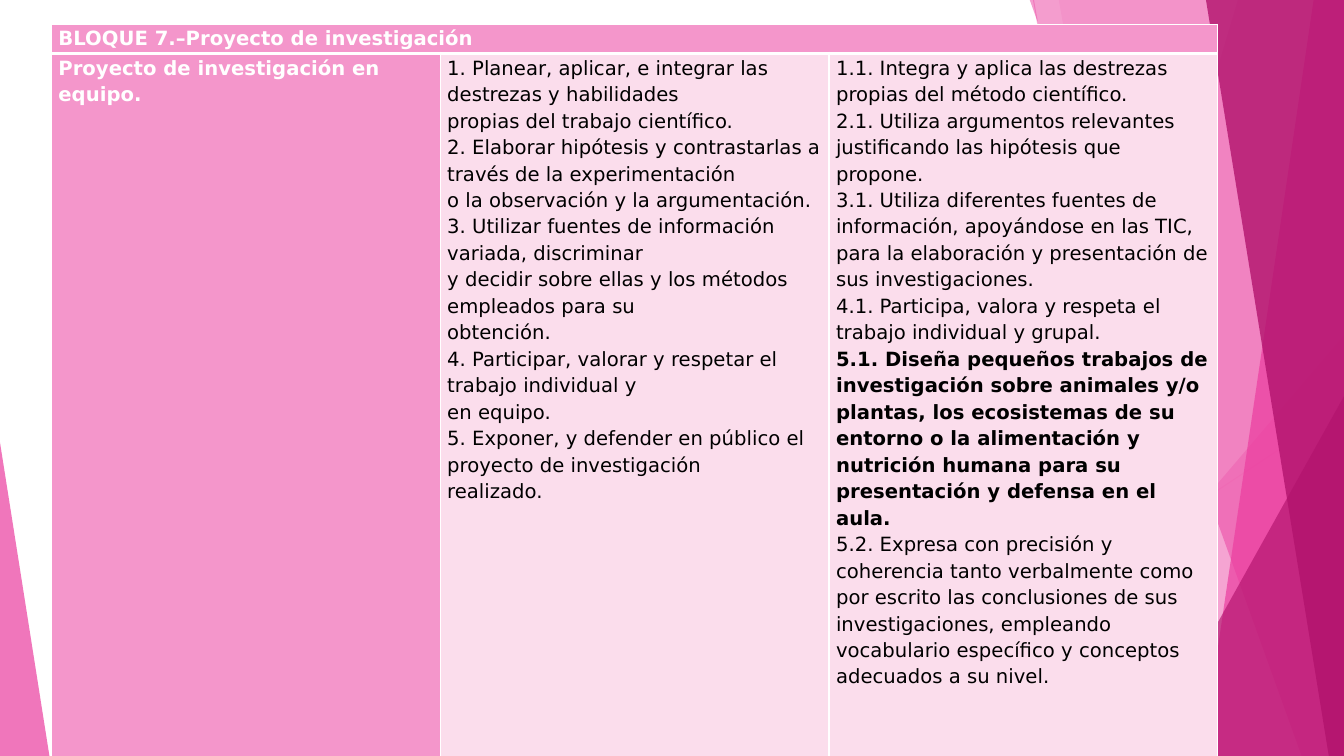
from pptx import Presentation
from pptx.dml.color import RGBColor
from pptx.enum.shapes import MSO_CONNECTOR, MSO_SHAPE
from pptx.oxml.ns import qn
from pptx.util import Pt
from lxml.etree import SubElement

PX = 9144  # 100 px to the inch
WIDE, HIGH = 1333, 750
FONT = "DejaVu Sans"
PINK, ROSE, WINE, PALE = "F496CB", "EB3D9F", "B2136D", "FBDDEC"
WHITE, BLACK = "FFFFFF", "000000"

TITLE = "BLOQUE 7.–Proyecto de investigación"
TOPIC = "Proyecto de investigación en equipo."
GOALS = [
    "1. Planear, aplicar, e integrar las destrezas y habilidades",
    "propias del trabajo científico.",
    "2. Elaborar hipótesis y contrastarlas a través de la experimentación",
    "o la observación y la argumentación.",
    "3. Utilizar fuentes de información variada, discriminar",
    "y decidir sobre ellas y los métodos empleados para su",
    "obtención.",
    "4. Participar, valorar y respetar el trabajo individual y",
    "en equipo.",
    "5. Exponer, y defender en público el proyecto de investigación",
    "realizado.",
]
MARKS = [
    "1.1. Integra y aplica las destrezas propias del método científico.",
    "2.1. Utiliza argumentos relevantes justificando las hipótesis que propone.",
    "3.1. Utiliza diferentes fuentes de información, apoyándose en las TIC, "
    "para la elaboración y presentación de sus investigaciones.",
    "4.1. Participa, valora y respeta el trabajo individual y grupal.",
    "5.1. Diseña pequeños trabajos de investigación sobre animales y/o plantas, "
    "los ecosistemas de su entorno o la alimentación y nutrición humana para su "
    "presentación y defensa en el aula.",
    "5.2. Expresa con precisión y coherencia tanto verbalmente como por escrito "
    "las conclusiones de sus investigaciones, empleando vocabulario específico "
    "y conceptos adecuados a su nivel.",
]


def px(*nums):
    return [round(n * PX) for n in nums]


def tint(color, hue, alpha=100):
    """Set a solid colour format and, if asked, its opacity."""
    color.rgb = RGBColor.from_string(hue)
    if alpha < 100:
        for clr in color._xFill.iter(qn("a:srgbClr")):
            SubElement(clr, qn("a:alpha"), val=str(alpha * 1000))


def paint(shape, hue, alpha):
    shape.shadow.inherit = False
    shape.fill.solid()
    tint(shape.fill.fore_color, hue, alpha)
    shape.line.fill.background()


def write(para, text, hue=BLACK, bold=False, size=14):
    para.line_spacing = 1.15
    run = para.add_run()
    run.text = text
    run.font.name, run.font.size, run.font.bold = FONT, Pt(size), bold
    tint(run.font.color, hue)


def ray(slide, ends):
    line = slide.shapes.add_connector(MSO_CONNECTOR.STRAIGHT, *px(*ends))
    line.line.width = Pt(0.75)
    line.line.fill.solid()
    tint(line.line.fill.fore_color, PINK, 70)
    SubElement(line._element.spPr, qn("a:effectLst"))


def band(slide, top, foot, edge, hue, alpha):
    """Slanted band from its left edge to the right edge of the slide."""
    form = slide.shapes.build_freeform(top, -1, scale=PX)
    form.add_line_segments([(edge, -1), (edge, HIGH), (foot, HIGH)])
    paint(form.convert_to_shape(), hue, alpha)


def wedge(slide, box, tip, hue, alpha):
    shape = slide.shapes.add_shape(MSO_SHAPE.ISOSCELES_TRIANGLE, *px(*box))
    shape.adjustments[0] = tip
    paint(shape, hue, alpha)


def facets(slide, edge, base):
    """Overlapping translucent facets at both sides."""
    ray(slide, (1025, 0, 1158, base))
    ray(slide, (edge, 403, 812, base))
    band(slide, 1228, 1004, edge, PINK, 36)
    band(slide, 1050, 1183, edge, PINK, 20)
    wedge(slide, (977, 333, edge - 977, base - 333), 1, PINK, 72)
    band(slide, 1021, 1291, edge, ROSE, 50)
    band(slide, 1303, 1192, edge, ROSE, 70)
    band(slide, 1196, 1318, edge, WINE, 80)
    wedge(slide, (1134, 393, edge - 1134, base - 393), 1, WINE, 66)
    wedge(slide, (0, 439, 49, base - 439), 0, ROSE, 70)


def border(cell, **sides):
    """Add white cell borders, each width in points."""
    props = cell._tc.get_or_add_tcPr()
    for side, width in sides.items():
        line = SubElement(props, qn("a:ln" + side), w=str(Pt(width)))
        fill = SubElement(line, qn("a:solidFill"))
        SubElement(fill, qn("a:srgbClr"), val=WHITE)


def entry(cell, lines, back, **look):
    cell.margin_left = cell.margin_right = px(7)[0]
    cell.margin_top = cell.margin_bottom = 0
    cell.fill.solid()
    tint(cell.fill.fore_color, back)
    frame = cell.text_frame
    for i, text in enumerate(lines):
        para = frame.add_paragraph() if i else frame.paragraphs[0]
        style = dict(look)
        if text.startswith("5.1."):
            style["bold"] = True
        write(para, text, **style)


def grid(slide, left, top, width, height):
    """Course table: title row above topic, goals and marks."""
    head = 29
    table = slide.shapes.add_table(2, 3, *px(left, top, width, height)).table
    table.horz_banding = False
    for col in table.columns:
        col.width = px(width / 3)[0]
    table.rows[0].height, table.rows[1].height = px(head, height - head)
    for col in range(3):
        border(table.cell(0, col), L=1, R=1, T=1, B=3)
        border(table.cell(1, col), L=1, R=1, T=3, B=1)
    table.cell(0, 0).merge(table.cell(0, 2))
    entry(table.cell(0, 0), [TITLE], PINK, hue=WHITE, bold=True)
    entry(table.cell(1, 0), [TOPIC], PINK, hue=WHITE, bold=True)
    entry(table.cell(1, 1), GOALS, PALE)
    entry(table.cell(1, 2), MARKS, PALE)


def main():
    deck = Presentation()
    deck.slide_width, deck.slide_height = px(WIDE, HIGH)
    slide = deck.slides.add_slide(deck.slide_layouts[6])
    facets(slide, WIDE, HIGH)
    grid(slide, 51, 24, 1157, 736)
    deck.save("out.pptx")


if __name__ == "__main__":
    main()
